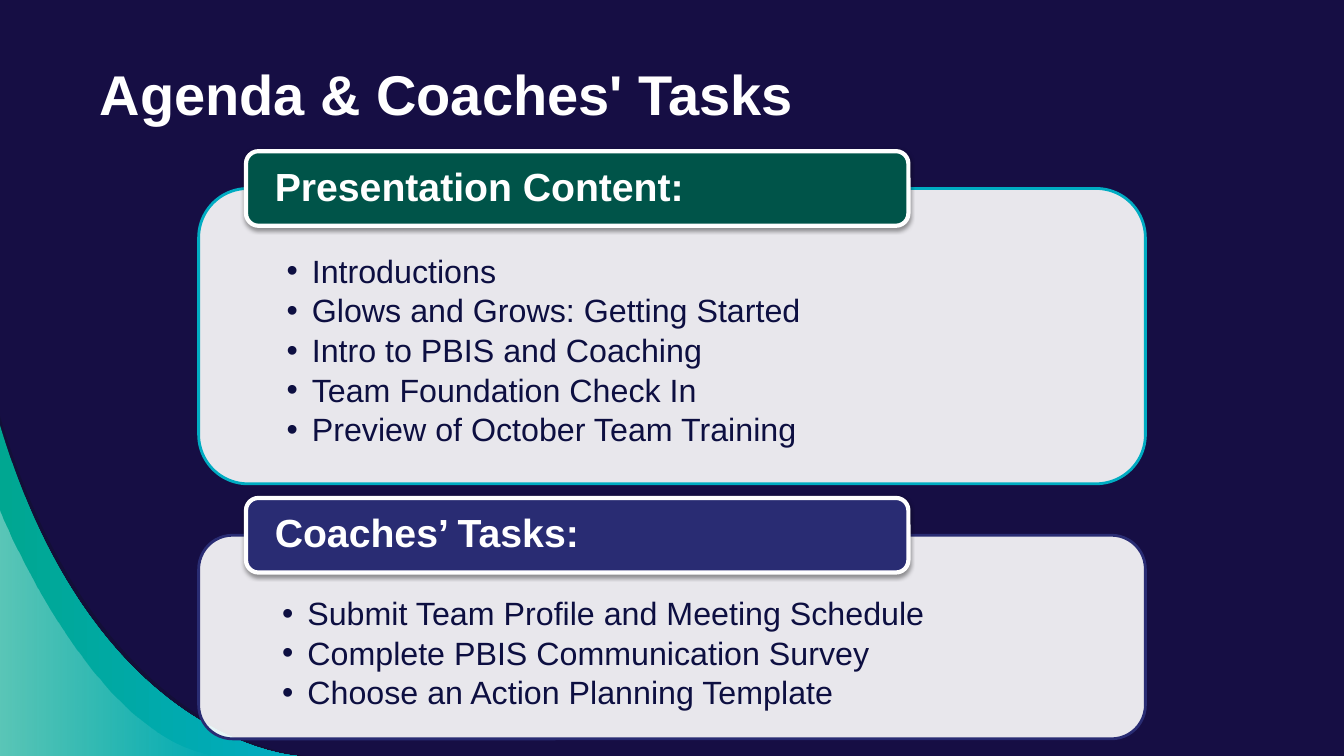
from dataclasses import dataclass

from lxml.etree import SubElement
from pptx import Presentation
from pptx.dml.color import RGBColor
from pptx.enum.shapes import MSO_SHAPE
from pptx.enum.text import MSO_ANCHOR, PP_ALIGN
from pptx.oxml.ns import qn
from pptx.util import Inches, Pt

TITLE = "Agenda & Coaches' Tasks"


@dataclass(frozen=True)
class Theme:
    font: str = "Arial"
    background: str = "160E44"
    white: str = "FFFFFF"
    ink: str = "0D0F41"
    cyan: str = "00ACC2"
    teal: str = "00A791"
    green: str = "005449"
    indigo: str = "292C73"
    shade: str = "12102F"
    shadow: str = "000000"
    title_size: int = 40
    heading_size: int = 28
    item_size: int = 23


T = Theme()

# heading, heading fill, panel outline, panel top, panel height, items
SECTIONS = [
    ("Presentation Content:", T.green, T.cyan, 1.87, 2.93, [
        "Introductions",
        "Glows and Grows: Getting Started",
        "Intro to PBIS and Coaching",
        "Team Foundation Check In",
        "Preview of October Team Training",
    ]),
    ("Coaches’ Tasks:", T.indigo, T.indigo, 5.31, 2.02, [
        "Submit Team Profile and Meeting Schedule",
        "Complete PBIS Communication Survey",
        "Choose an Action Planning Template",
    ]),
]

# four Bezier points, then (colour, opacity %) from left to right
SWOOSHES = [
    ([(0, 4.13), (0.98, 7.39), (3.03, 7.5), (3.03, 7.5)], [(T.shade, 54)]),
    ([(0, 4.22), (0.95, 7.39), (2.95, 7.5), (2.95, 7.5)],
     [(T.teal, 100), (T.cyan, 100)]),
    ([(0, 5.06), (0, 5.06), (0.91, 7.35), (2.16, 7.5)],
     [(T.white, 36), (T.white, 0)]),
]
CORNER = (0, 7.5)

PANEL_LEFT, PANEL_WIDTH = 1.97, 9.39
TAB_LEFT, TAB_WIDTH, TAB_HEIGHT, TAB_RISE = 2.44, 6.57, 0.74, 0.37


def rgb(color):
    return RGBColor.from_string(color)


def paint(sp, colors):
    """Fill with one colour, or with a left-to-right gradient of two."""
    if len(colors) == 1:
        sp.fill.solid()
        sp.fill.fore_color.rgb = rgb(colors[0][0])
    else:
        sp.fill.gradient()
        sp.fill.gradient_angle = 0
        for stop, (color, _) in zip(sp.fill.gradient_stops, colors):
            stop.color.rgb = rgb(color)
    nodes = list(sp._element.spPr.iter(qn("a:srgbClr")))
    for node, (_, opacity) in zip(nodes, colors):
        if opacity < 100:
            SubElement(node, qn("a:alpha"), val=str(opacity * 1000))


def bend_first_side(sp):
    """Turn the first three line segments into one cubic Bezier curve."""
    lines = list(sp._element.spPr.iter(qn("a:lnTo")))[:3]
    outline = lines[0].getparent()
    curve = SubElement(outline, qn("a:cubicBezTo"))
    lines[0].addprevious(curve)
    for line in lines:
        curve.append(line[0])
        outline.remove(line)


def add_swoosh(slide, points, colors):
    start, *rest = [(Inches(x), Inches(y)) for x, y in points + [CORNER]]
    builder = slide.shapes.build_freeform(*start, scale=1.0)
    builder.add_line_segments(rest, close=True)
    sp = builder.convert_to_shape()
    bend_first_side(sp)
    sp.shadow.inherit = False
    paint(sp, colors)
    sp.line.fill.background()


def add_box(slide, box, fill, opacity, outline, weight):
    sp = slide.shapes.add_shape(MSO_SHAPE.ROUNDED_RECTANGLE,
                                *(Inches(v) for v in box))
    sp.shadow.inherit = False
    paint(sp, [(fill, opacity)])
    sp.line.color.rgb = rgb(outline)
    sp.line.width = Pt(weight)
    return sp


def set_frame(tf, side, top, bottom, anchor):
    tf.word_wrap = True
    tf.margin_left = tf.margin_right = Inches(side)
    tf.margin_top, tf.margin_bottom = Inches(top), Inches(bottom)
    tf.vertical_anchor = anchor


def write(p, text, size, color, bold=False):
    p.alignment = PP_ALIGN.LEFT
    p.line_spacing = 0.9
    r = p.add_run()
    r.text = text
    r.font.name, r.font.size, r.font.bold = T.font, Pt(size), bold
    r.font.color.rgb = rgb(color)


def add_bullet(p):
    pPr = p._p.get_or_add_pPr()
    pPr.set("marL", str(Inches(0.25)))
    pPr.set("indent", str(-Inches(0.25)))
    SubElement(pPr, qn("a:buFont"), typeface=T.font)
    SubElement(pPr, qn("a:buChar"), char="•")


def add_shadow(sp):
    effects = sp._element.spPr.find(qn("a:effectLst"))
    shadow = SubElement(effects, qn("a:outerShdw"), blurRad=str(Pt(3.1)),
                        dist=str(Pt(1.6)), dir="5400000", rotWithShape="0")
    color = SubElement(shadow, qn("a:srgbClr"), val=T.shadow)
    SubElement(color, qn("a:alpha"), val="38000")


def add_section(slide, heading, fill, outline, top, height, items):
    panel = add_box(slide, (PANEL_LEFT, top, PANEL_WIDTH, height),
                    T.white, 90, outline, 2)
    tf = panel.text_frame
    set_frame(tf, 0.73, 0.52, 0.18, MSO_ANCHOR.TOP)
    for i, item in enumerate(items):
        p = tf.add_paragraph() if i else tf.paragraphs[0]
        p.space_after = Pt(3.5)
        write(p, item, T.item_size, T.ink)
        add_bullet(p)

    tab = add_box(slide, (TAB_LEFT, top - TAB_RISE, TAB_WIDTH, TAB_HEIGHT),
                  fill, 100, T.white, 3)
    add_shadow(tab)
    tf = tab.text_frame
    set_frame(tf, 0.25, 0, 0, MSO_ANCHOR.MIDDLE)
    write(tf.paragraphs[0], heading, T.heading_size, T.white, bold=True)


def main():
    prs = Presentation()
    prs.slide_width, prs.slide_height = Inches(13.33), Inches(7.5)
    slide = prs.slides.add_slide(prs.slide_layouts[5])
    slide.background.fill.solid()
    slide.background.fill.fore_color.rgb = rgb(T.background)

    for points, colors in SWOOSHES:
        add_swoosh(slide, points, colors)
    for section in SECTIONS:
        add_section(slide, *section)

    title = slide.shapes.title
    title.left, title.top = Inches(0.89), Inches(0.51)
    title.width, title.height = Inches(10.26), Inches(0.92)
    tf = title.text_frame
    set_frame(tf, 0.1, 0.1, 0.1, MSO_ANCHOR.MIDDLE)
    write(tf.paragraphs[0], TITLE, T.title_size, T.white, bold=True)

    prs.save("out.pptx")


if __name__ == "__main__":
    main()
